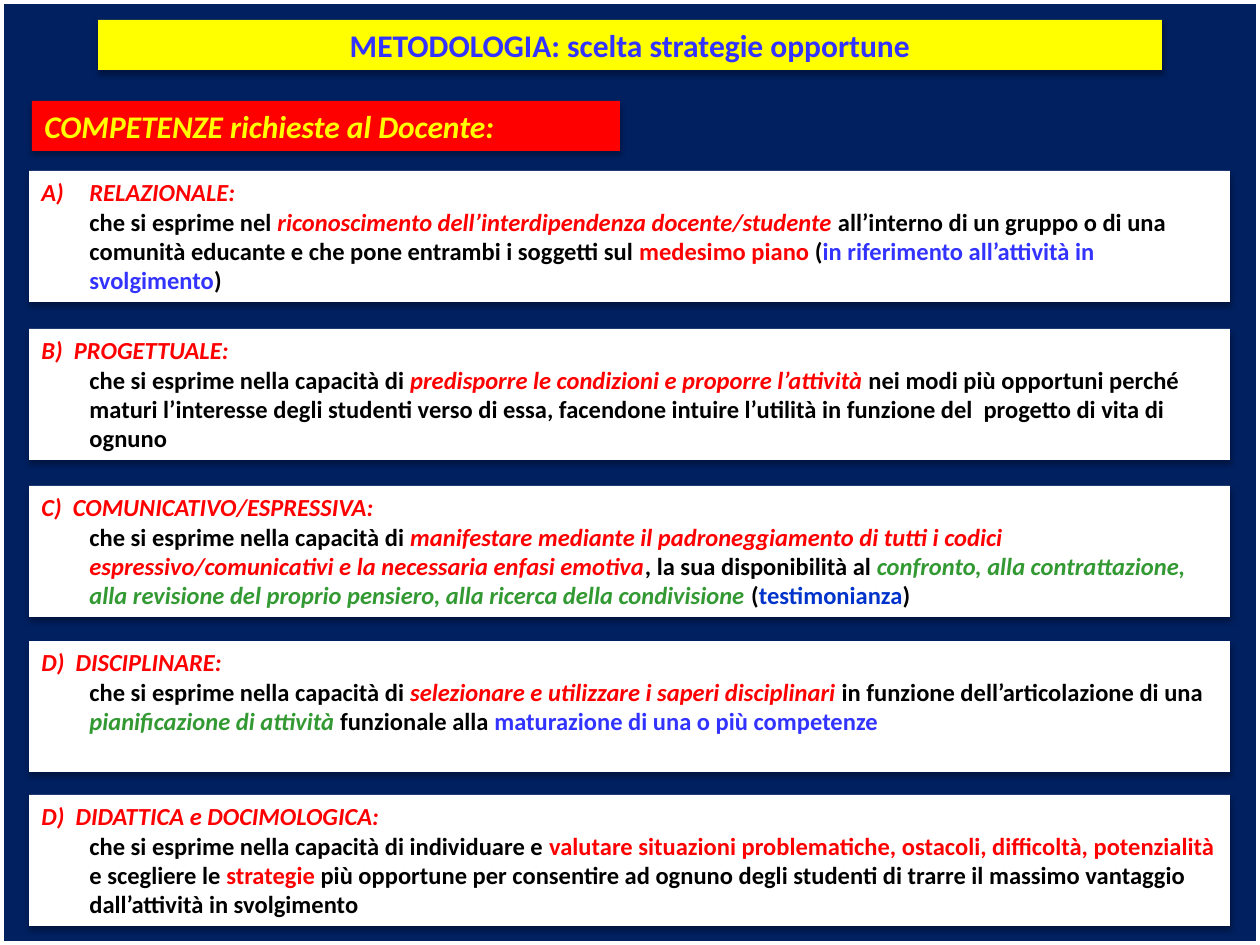
"""Build the slide on the competences required of the teacher."""
from pptx import Presentation
from pptx import util as u
from pptx.dml.color import RGBColor
from pptx.enum import shapes, text
from pptx.oxml import ns
from lxml import etree

COLORS = {
    "navy": "002060", "white": "FFFFFF", "black": "000000", "yellow": "FFFF00",
    "red": "FF0000", "violet": "3333FF", "blue": "0033CC", "green": "339933",
}
FONT = "Calibri"
SLIDE = (1260, 945)
TITLE = ("METODOLOGIA: scelta strategie opportune", (98, 20, 1064, 50))
BANNER = ("COMPETENZE richieste al Docente:", (32, 101, 588, 50))
CARD_LEFT, CARD_WIDTH, CARD_HEIGHT, INDENT = 29, 1201, 131, 48

# Each card: top, auto-numbered, heading, runs of (text, color, italic)
CARDS = [
    (171, True, "RELAZIONALE:", [
        ("che si esprime nel ", "black", False),
        ("riconoscimento dell’interdipendenza docente/studente ", "red", True),
        ("all’interno di un gruppo o di una comunità educante e che pone "
         "entrambi i soggetti sul ", "black", False),
        ("medesimo piano ", "red", False),
        ("(", "black", False),
        ("in riferimento all’attività in svolgimento", "violet", False),
        (")", "black", False)]),
    (329, False, "B)  PROGETTUALE:", [
        ("che si esprime nella capacità di ", "black", False),
        ("predisporre le condizioni e proporre l’attività ", "red", True),
        ("nei modi più opportuni perché maturi l’interesse degli studenti verso "
         "di essa, facendone intuire l’utilità in funzione del  progetto di vita "
         "di ognuno", "black", False)]),
    (486, False, "C)  COMUNICATIVO/ESPRESSIVA:", [
        ("che si esprime nella capacità di ", "black", False),
        ("manifestare mediante il padroneggiamento di tutti i codici "
         "espressivo/comunicativi e la necessaria enfasi emotiva", "red", True),
        (", la sua disponibilità al ", "black", False),
        ("confronto, alla contrattazione, alla revisione del proprio pensiero, "
         "alla ricerca della condivisione ", "green", True),
        ("(", "black", False),
        ("testimonianza", "blue", False),
        (")", "black", False)]),
    (641, False, "D)  DISCIPLINARE:", [
        ("che si esprime nella capacità di ", "black", False),
        ("selezionare e utilizzare i saperi disciplinari ", "red", True),
        ("in funzione dell’articolazione di una ", "black", False),
        ("pianificazione di attività ", "green", True),
        ("funzionale alla ", "black", False),
        ("maturazione di una o più competenze", "violet", False)]),
    (795, False, "D)  DIDATTICA e DOCIMOLOGICA:", [
        ("che si esprime nella capacità di individuare e ", "black", False),
        ("valutare situazioni problematiche, ostacoli, difficoltà, potenzialità",
         "red", False),
        (" e scegliere le ", "black", False),
        ("strategie", "red", False),
        (" più opportune per consentire ad ognuno degli studenti di trarre il "
         "massimo vantaggio dall’attività in svolgimento", "black", False)]),
]


def px(n):
    return u.Emu(round(n * 914400 / 126))


def rgb(name):
    return RGBColor.from_string(COLORS[name])


def add_run(p, words, color, size, italic):
    r = p.add_run()
    r.text = words
    r.font.name, r.font.size = FONT, u.Pt(size)
    r.font.bold, r.font.italic = True, italic
    r.font.color.rgb = rgb(color)


def style_panel(sp, box, fill):
    sp.left, sp.top, sp.width, sp.height = map(px, box)
    sp.fill.solid()
    sp.fill.fore_color.rgb = rgb(fill)
    sp.line.fill.background()
    sp.shadow.inherit = False
    effects = sp._element.spPr.find(ns.qn("a:effectLst"))
    shadow = etree.SubElement(effects, ns.qn("a:outerShdw"), blurRad="44450",
                              dist="27940", dir="5400000", rotWithShape="0")
    color = etree.SubElement(shadow, ns.qn("a:srgbClr"), val=COLORS["black"])
    etree.SubElement(color, ns.qn("a:alpha"), val="32000")
    tf = sp.text_frame
    tf.word_wrap = True
    tf.auto_size = text.MSO_AUTO_SIZE.NONE
    tf.vertical_anchor = text.MSO_ANCHOR.TOP
    return tf


def add_rect(s, box):
    return s.shapes.add_shape(shapes.MSO_SHAPE.RECTANGLE, *map(px, box))


def set_indent(p, first_line):
    p.alignment = text.PP_ALIGN.LEFT
    pPr = p._p.get_or_add_pPr()
    pPr.set("marL", str(px(INDENT)))
    pPr.set("indent", str(px(first_line)))
    return pPr


def add_card(s, top, numbered, heading, runs):
    box = (CARD_LEFT, top, CARD_WIDTH, CARD_HEIGHT)
    tf = style_panel(add_rect(s, box), box, "white")
    p = tf.paragraphs[0]
    pPr = set_indent(p, -INDENT)
    if numbered:
        etree.SubElement(pPr, ns.qn("a:buFont"), typeface="+mj-lt")
        etree.SubElement(pPr, ns.qn("a:buAutoNum"), type="alphaUcParenR")
    add_run(p, heading, "red", 14, True)
    p = tf.add_paragraph()
    set_indent(p, 0)
    for words, color, italic in runs:
        add_run(p, words, color, 14, italic)


def main():
    prs = Presentation()
    prs.slide_width, prs.slide_height = map(px, SLIDE)
    s = prs.slides.add_slide(prs.slide_layouts[5])
    s.background.fill.solid()
    s.background.fill.fore_color.rgb = rgb("navy")

    frame = add_rect(s, (0, 0, *SLIDE))
    frame.fill.background()
    frame.line.color.rgb = rgb("white")
    frame.line.width = u.Pt(4.5)
    frame.shadow.inherit = False

    words, box = TITLE
    p = style_panel(s.shapes.title, box, "yellow").paragraphs[0]
    p.alignment = text.PP_ALIGN.CENTER
    add_run(p, words, "violet", 18, False)

    words, box = BANNER
    p = style_panel(add_rect(s, box), box, "red").paragraphs[0]
    p.alignment = text.PP_ALIGN.LEFT
    add_run(p, words, "yellow", 18, True)

    for card in CARDS:
        add_card(s, *card)
    prs.save("out.pptx")


if __name__ == "__main__":
    main()
